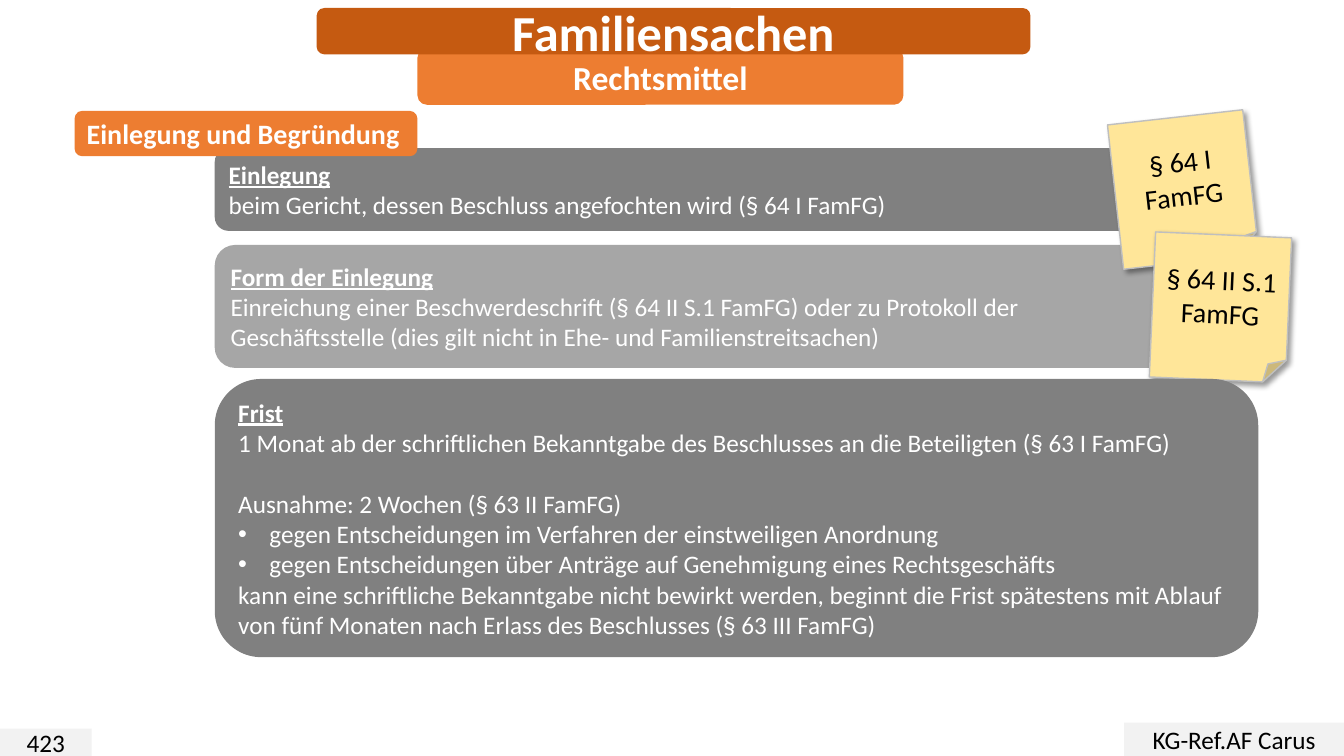
from lxml import etree
from pptx import Presentation
from pptx.dml.color import RGBColor
from pptx.enum import shapes, text
from pptx.oxml import ns
from pptx.util import Inches, Pt

WHITE = RGBColor(0xFF, 0xFF, 0xFF)
BLACK = RGBColor(0, 0, 0)
DARK_ORANGE = RGBColor(0xC5, 0x5A, 0x11)
ORANGE = RGBColor(0xED, 0x7D, 0x31)
DARK_GRAY = RGBColor(0x80, 0x80, 0x80)
MID_GRAY = RGBColor(0xA6, 0xA6, 0xA6)
PALE_GRAY = RGBColor(0xF2, 0xF2, 0xF2)
EDGE_GRAY = RGBColor(0xBF, 0xBF, 0xBF)
YELLOW = RGBColor(0xFF, 0xE6, 0x99)

FONT = "Calibri"
BULLET = "• "
PANEL_LEFT = 2.13
NOTE_SIZE = (1.35, 1.44)

SUBMISSION = (1.47, 9.6, 0.82, DARK_GRAY, [
    "Einlegung",
    "beim Gericht, dessen Beschluss angefochten wird (§ 64 I FamFG)",
])
FORM = (2.43, 9.6, 1.22, MID_GRAY, [
    "Form der Einlegung",
    "Einreichung einer Beschwerdeschrift (§ 64 II S.1 FamFG) oder zu Protokoll der "
    "Geschäftsstelle (dies gilt nicht in Ehe- und Familienstreitsachen)",
])
DEADLINE = (3.76, 10.35, 2.76, DARK_GRAY, [
    "Frist",
    "1 Monat ab der schriftlichen Bekanntgabe des Beschlusses an die Beteiligten (§ 63 I FamFG)",
    "Ausnahme: 2 Wochen (§ 63 II FamFG)",
    "• gegen Entscheidungen im Verfahren der einstweiligen Anordnung",
    "• gegen Entscheidungen über Anträge auf Genehmigung eines Rechtsgeschäfts",
    "kann eine schriftliche Bekanntgabe nicht bewirkt werden, beginnt die Frist spätestens "
    "mit Ablauf von fünf Monaten nach Erlass des Beschlusses (§ 63 III FamFG)",
])
HEADINGS = [
    ((4.14, 0.48, 4.82, 0.56), ORANGE, "Rechtsmittel", 24, True),
    ((3.14, 0.08, 7.08, 0.46), DARK_ORANGE, "Familiensachen", 36, True),
    ((0.74, 1.1, 3.4, 0.45), ORANGE, "Einlegung und Begründung", 20, False),
]
FOOTERS = [
    ((0, 7.23, 0.91, 0.27), "423"),
    ((11.15, 7.17, 2.18, 0.33), "KG-Ref.AF Carus"),
]
NOTES = [
    ((11.06, 1.16), -6.4, ["§ 64 I FamFG"]),
    ((11.43, 2.33), 2.5, ["§ 64 II S.1", "FamFG"]),
]


def add_box(page, kind, bounds, fill, lines, size, color, bold=False, centered=True):
    box = page.shapes.add_shape(kind, *map(Inches, bounds))
    box.shadow.inherit = False
    box.fill.solid()
    box.fill.fore_color.rgb = fill
    box.line.fill.background()
    frame = box.text_frame
    frame.word_wrap = True
    frame.vertical_anchor = text.MSO_ANCHOR.MIDDLE
    frame.text = "\n".join(lines)
    for para in frame.paragraphs:
        para.alignment = text.PP_ALIGN.CENTER if centered else text.PP_ALIGN.LEFT
        for span in para.runs:
            span.font.name = FONT
            span.font.size = Pt(size)
            span.font.bold = bold
            span.font.color.rgb = color
    return box


def add_bullet(para):
    span = para.runs[0]
    span.text = span.text.removeprefix(BULLET)
    properties = para._p.get_or_add_pPr()
    properties.set("marL", str(Inches(0.31)))
    properties.set("indent", str(-Inches(0.31)))
    etree.SubElement(properties, ns.qn("a:buFont"), typeface="Arial")
    etree.SubElement(properties, ns.qn("a:buChar"), char=BULLET.strip())


def add_panel(page, top, width, height, fill, lines):
    bounds = (PANEL_LEFT, top, width, height)
    box = add_box(page, shapes.MSO_SHAPE.ROUNDED_RECTANGLE, bounds, fill,
                  lines, 18, WHITE, centered=False)
    paragraphs = box.text_frame.paragraphs
    heading = paragraphs[0].runs[0].font
    heading.bold = True
    heading.underline = True
    for para in paragraphs:
        if para.text.startswith(BULLET):
            add_bullet(para)
        elif para.text.startswith("Ausnahme"):
            para.space_before = Pt(22)


def add_note(page, corner, rotation, lines):
    box = add_box(page, shapes.MSO_SHAPE.FOLDED_CORNER, corner + NOTE_SIZE,
                  YELLOW, lines, 20, BLACK)
    box.rotation = rotation
    box.line.color.rgb = EDGE_GRAY
    box.line.width = Pt(1)
    effects = box._element.spPr.find(ns.qn("a:effectLst"))
    shadow = etree.SubElement(effects, ns.qn("a:outerShdw"), blurRad=str(Pt(4)),
                              dist=str(Pt(3)), dir=str(45 * 60000),
                              algn="tl", rotWithShape="0")
    tint = etree.SubElement(shadow, ns.qn("a:srgbClr"), val=str(BLACK))
    etree.SubElement(tint, ns.qn("a:alpha"), val="40000")


def main():
    deck = Presentation()
    deck.slide_width = Inches(13.33)
    deck.slide_height = Inches(7.5)
    page = deck.slides.add_slide(deck.slide_layouts[6])

    add_panel(page, *SUBMISSION)
    for bounds, fill, label, size, centered in HEADINGS:
        add_box(page, shapes.MSO_SHAPE.ROUNDED_RECTANGLE, bounds, fill,
                [label], size, WHITE, True, centered)
    for bounds, label in FOOTERS:
        add_box(page, shapes.MSO_SHAPE.RECTANGLE, bounds, PALE_GRAY, [label], 18, BLACK)
    add_panel(page, *FORM)
    for note in NOTES:
        add_note(page, *note)
    add_panel(page, *DEADLINE)

    deck.save("out.pptx")


if __name__ == "__main__":
    main()
